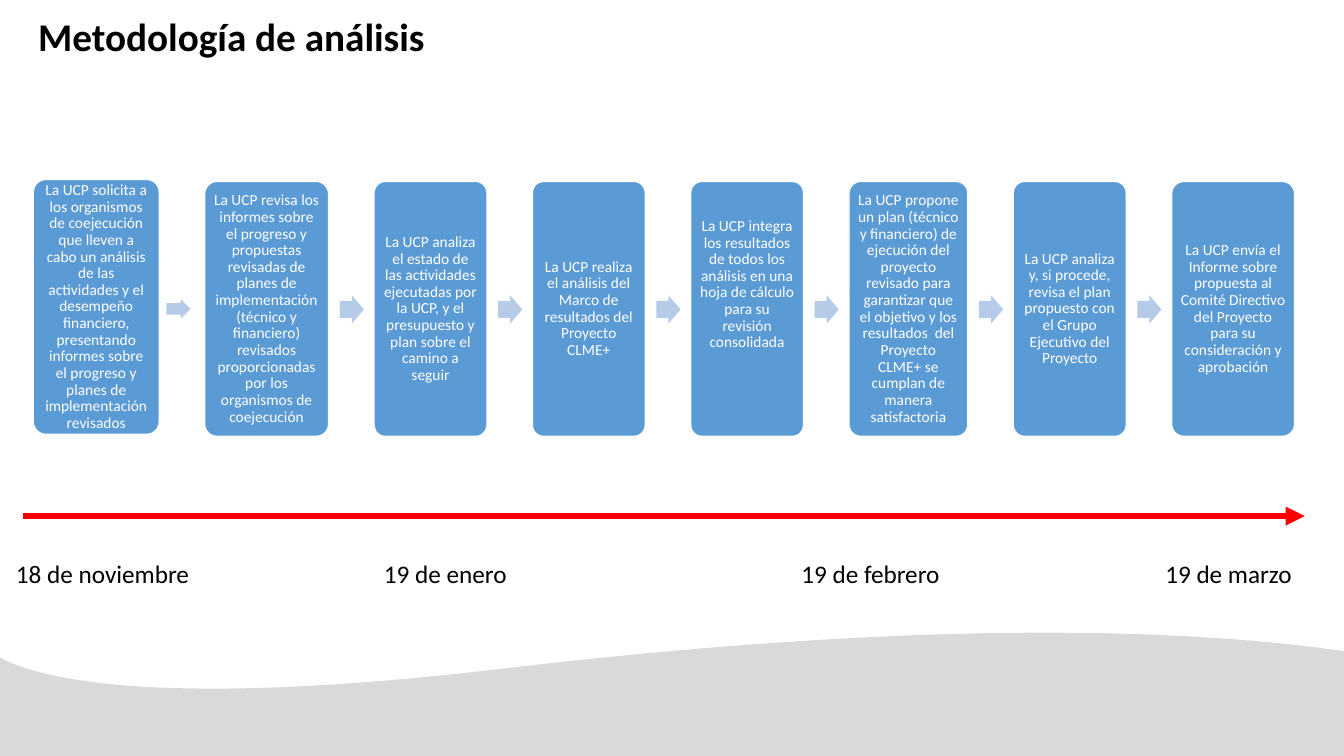
from lxml.etree import SubElement
from pptx import Presentation
from pptx.dml.color import RGBColor
from pptx.enum.shapes import MSO_CONNECTOR as Connector, MSO_SHAPE as Shape
from pptx.enum.text import MSO_ANCHOR as Anchor, PP_ALIGN as Align
from pptx.oxml.ns import qn
from pptx.util import Inches, Pt

FONT = "Calibri"
BLACK, WHITE, RED = "000000", "FFFFFF", "FF0000"
CARD_BLUE, ARROW_BLUE, WAVE_GRAY = "5B9BD5", "B5CBE7", "D9D9D9"

CARD_TOP, CARD_HEIGHT, CARD_GAP, FIRST_LEFT = 1.8, 2.53, 0.45, 0.33
INSET = 0.05

# Width and text of each step
STEPS = [
    (1.25, "La UCP solicita a los organismos de coejecución que lleven a cabo un "
           "análisis de las actividades y el desempeño financiero, presentando "
           "informes sobre el progreso y planes de implementación revisados"),
    (1.23, "La UCP revisa los informes sobre el progreso y propuestas revisadas de "
           "planes de implementación (técnico y financiero) revisados "
           "proporcionadas por los organismos de coejecución"),
    (1.12, "La UCP analiza el estado de las actividades ejecutadas por la UCP, y el "
           "presupuesto y plan sobre el camino a seguir"),
    (1.12, "La UCP realiza el análisis del Marco de resultados del Proyecto CLME+"),
    (1.12, "La UCP integra los resultados de todos los análisis en una hoja de "
           "cálculo para su revisión consolidada"),
    (1.18, "La UCP propone un plan (técnico y financiero) de ejecución del proyecto "
           "revisado para garantizar que el objetivo y los resultados  del Proyecto "
           "CLME+ se cumplan de manera satisfactoria"),
    (1.12, "La UCP analiza y, si procede, revisa el plan propuesto con el Grupo "
           "Ejecutivo del Proyecto"),
    (1.22, "La UCP envía el Informe sobre propuesta al Comité Directivo del Proyecto "
           "para su consideración y aprobación"),
]
RAISED_TEXT_STEP = 4

# Left, width and text of each date
DATES = [
    (0.06, 1.99, "18 de noviembre"),
    (3.71, 1.69, "19 de enero"),
    (7.85, 1.87, "19 de febrero"),
    (11.46, 1.87, "19 de marzo"),
]


def color(value):
    return RGBColor.from_string(value)


def paint(shape, fill, line=None):
    shape.shadow.inherit = False
    shape.fill.solid()
    shape.fill.fore_color.rgb = color(fill)
    if line:
        shape.line.color.rgb = color(line)
        shape.line.width = Pt(1)
    else:
        shape.line.fill.background()


def add_run(para, text, size, ink, bold=False):
    span = para.add_run()
    span.text = text
    span.font.name = FONT
    span.font.size = Pt(size)
    span.font.bold = bold
    span.font.color.rgb = color(ink)


def add_label(page, left, top, width, height, text, size, bold=False):
    box = page.shapes.add_textbox(Inches(left), Inches(top), Inches(width), Inches(height))
    box.text_frame.word_wrap = True
    add_run(box.text_frame.paragraphs[0], text, size, BLACK, bold)


def add_card(page, left, top, width, text, bottom_inset):
    card = page.shapes.add_shape(Shape.ROUNDED_RECTANGLE, Inches(left), Inches(top),
                                 Inches(width), Inches(CARD_HEIGHT))
    card.adjustments[0] = 0.1
    paint(card, CARD_BLUE, WHITE)
    frame = card.text_frame
    frame.word_wrap = True
    frame.vertical_anchor = Anchor.MIDDLE
    frame.margin_left = frame.margin_right = frame.margin_top = Inches(INSET)
    frame.margin_bottom = Inches(bottom_inset)
    para = frame.paragraphs[0]
    para.alignment = Align.CENTER
    para.line_spacing = 0.9
    add_run(para, text, 11, WHITE)


def add_step_arrow(page, left, top, height):
    arrow = page.shapes.add_shape(Shape.RIGHT_ARROW, Inches(left), Inches(top),
                                  Inches(0.24), Inches(height))
    arrow.adjustments[0] = 0.6
    arrow.adjustments[1] = 0.5
    paint(arrow, ARROW_BLUE)


def add_steps(page):
    left = FIRST_LEFT
    for index, (width, text) in enumerate(STEPS):
        first = index == 0
        bottom_inset = 0.53 if index == RAISED_TEXT_STEP else INSET
        add_card(page, left, 1.78 if first else CARD_TOP, width, text, bottom_inset)
        left += width
        if first:
            add_step_arrow(page, left + 0.07, 2.97, 0.19)
        elif index < len(STEPS) - 1:
            add_step_arrow(page, left + 0.11, 2.93, 0.28)
        left += CARD_GAP


def add_timeline(page, left, right, top):
    line = page.shapes.add_connector(Connector.STRAIGHT, Inches(left), Inches(top),
                                     Inches(right), Inches(top))
    line.line.color.rgb = color(RED)
    line.line.width = Pt(4.5)
    SubElement(line.line._get_or_add_ln(), qn("a:tailEnd"), type="triangle")
    SubElement(line._element.spPr, qn("a:effectLst"))


def curve_points(start, control1, control2, end, steps=40):
    """Points along a cubic curve, without its start."""
    for step in range(1, steps + 1):
        t = step / steps
        weights = ((1 - t) ** 3, 3 * t * (1 - t) ** 2, 3 * t * t * (1 - t), t ** 3)
        yield tuple(Inches(sum(w * v for w, v in zip(weights, values)))
                    for values in zip(start, control1, control2, end))


def add_wave(page):
    right, crest, left = (13.33, 6.46), (5.02, 6.63), (-0.02, 6.51)
    outline = [(Inches(right[0]), Inches(right[1]))]
    outline += curve_points(right, (11.65, 6.22), (9.02, 6.16), crest)
    outline += curve_points(crest, (1.33, 7.07), (0.26, 6.68), left)
    outline.append((Inches(left[0]), Inches(7.5)))
    builder = page.shapes.build_freeform(Inches(right[0]), Inches(7.5))
    builder.add_line_segments(outline, close=True)
    paint(builder.convert_to_shape(), WAVE_GRAY)


def main():
    deck = Presentation()
    deck.slide_width, deck.slide_height = Inches(13.33), Inches(7.5)
    page = deck.slides.add_slide(deck.slide_layouts[6])

    # Background wave and title
    add_wave(page)
    add_label(page, 0.28, 0.07, 5.62, 0.57, "Metodología de análisis", 28, bold=True)

    # Timeline with its dates
    add_timeline(page, 0.23, 12.94, 5.12)
    for left, width, date in DATES:
        add_label(page, left, 5.49, width, 0.4, date, 18)

    # Process steps
    add_steps(page)
    deck.save("out.pptx")


if __name__ == "__main__":
    main()
